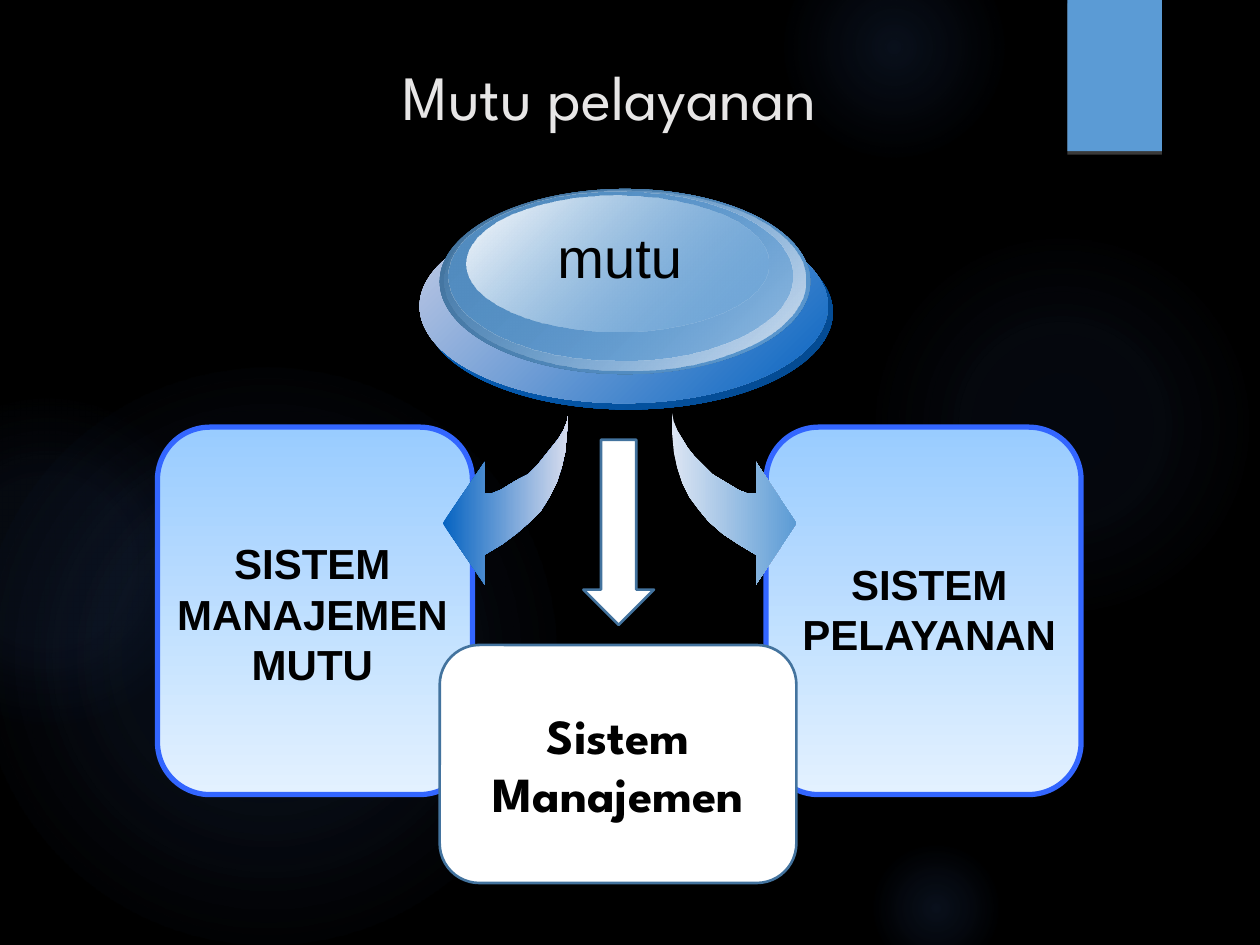
from lxml.etree import SubElement
from pptx import Presentation
from pptx.dml.color import RGBColor
from pptx.enum.shapes import MSO_SHAPE
from pptx.enum.text import MSO_ANCHOR, PP_ALIGN
from pptx.oxml.ns import qn
from pptx.util import Pt

# Soft lights: left, top, size, stops of (position, opacity)
GLOWS = [
    (496, 132, 222, [(0, 7), (36, 6), (69, 0)]),
    (448, -36, 126, [(0, 14), (36, 7), (73, 0)]),
    (496, 480, 78, [(0, 14), (36, 7), (66, 0)]),
    (-12, 210, 330, [(0, 11), (36, 10), (75, 0)]),
    (-66, 228, 186, [(0, 8), (36, 8), (72, 0)]),
]

# Layers of the disc: box, first and last (colour, opacity)
DISC = [
    ((242.6, 123.1, 233.3, 110.9), ("0563C1", 100), ("04488D", 100)),
    ((239.8, 119.5, 233.3, 110.9), ("C6CDE6", 100), ("0563C1", 100)),
    ((251.3, 108, 211.7, 105.8), ("416F98", 100), ("5B9BD5", 100)),
    ((254.2, 108.7, 205.9, 103), ("5B9BD5", 0), ("D8E3F1", 100)),
    ((256.3, 109.4, 196.6, 96.5), ("528CC0", 100), ("5B9BD5", 48)),
    ((266.4, 111.6, 172.8, 77.8), ("FFFFFF", 100), ("5B9BD5", 38)),
]

# Curved arrow: distance outward from its tail, distance down
CURVE = [
    (0, 0), (0.5, 10.8), (1.5, 21.6), (3.5, 31), (6.5, 39.6), (10.5, 47.5),
    (16, 55.5), (21.5, 62), (29.5, 68.5), (38, 75), (48, 80.6), (48, 98),
    (71.3, 62.6), (48, 28), (48, 45.4), (43.5, 45.4), (38.5, 44), (33.5, 41),
    (28.5, 38), (23, 34.5), (18, 30.2), (13.5, 25.2), (9.5, 20.2), (6, 15),
    (3, 10), (1, 5),
]
AXIS, TAIL, TOP = 354.2, 29.5, 236.2


def rgb(code):
    return RGBColor.from_string(code)


def tint(parent, code, alpha):
    node = SubElement(parent, qn("a:srgbClr"), val=code)
    if alpha < 100:
        SubElement(node, qn("a:alpha"), val=str(alpha * 1000))


def blend(shape, stops, angle=None):
    """Gradient of (position, colour, opacity); radial without an angle."""
    shape.fill.background()
    props = shape.fill._xPr
    old = props.find(qn("a:noFill"))
    grad = SubElement(props, qn("a:gradFill"), rotWithShape="1")
    props.replace(old, grad)
    group = SubElement(grad, qn("a:gsLst"))
    for pos, code, alpha in stops:
        tint(SubElement(group, qn("a:gs"), pos=str(pos * 1000)), code, alpha)
    if angle is None:
        way = SubElement(grad, qn("a:path"), path="circle")
        SubElement(way, qn("a:fillToRect"), l="50000", t="50000",
                   r="50000", b="50000")
    else:
        SubElement(grad, qn("a:lin"), ang=str(angle * 60000), scaled="0")


def plain(shape, fill=None, line=None, width=1):
    shape.shadow.inherit = False
    if fill:
        shape.fill.solid()
        shape.fill.fore_color.rgb = rgb(fill)
    if line:
        shape.line.color.rgb = rgb(line)
        shape.line.width = Pt(width)
    else:
        shape.line.fill.background()
    return shape


def block(slide, kind, box, *style):
    return plain(slide.shapes.add_shape(kind, *map(Pt, box)), *style)


def write(shape, text, size, font, color="000000", bold=False):
    frame = shape.text_frame
    frame.text = text
    for para in frame.paragraphs:
        para.alignment = PP_ALIGN.CENTER
        for run in para.runs:
            run.font.size = Pt(size)
            run.font.name = font
            run.font.bold = bold
            run.font.color.rgb = rgb(color)


def label(slide, box, text, size, bold=False, wrap=True):
    note = slide.shapes.add_textbox(*map(Pt, box))
    note.text_frame.word_wrap = wrap
    write(note, text, size, "Arial", bold=bold)


def scene(slide):
    slide.background.fill.solid()
    slide.background.fill.fore_color.rgb = rgb("000000")
    for left, top, size, stops in GLOWS:
        glow = block(slide, MSO_SHAPE.OVAL, (left, top, size, size))
        blend(glow, [(pos, "4472C4", alpha) for pos, alpha in stops])
    # Corner tab with a thin shadow below
    tab = block(slide, MSO_SHAPE.RECTANGLE, (610, 0, 54, 86.4), "5B9BD5")
    effect = tab.fill._xPr.find(qn("a:effectLst"))
    shade = SubElement(effect, qn("a:outerShdw"), blurRad="0",
                       dist=str(Pt(2)), dir="5400000", rotWithShape="0")
    tint(shade, "808080", 45)


def head(slide, text):
    title = slide.shapes.title
    title.left, title.top, title.width, title.height = map(
        Pt, (74.9, 29.5, 555.8, 110.2))
    write(title, text, 36, "League Spartan", "E7E6E6")
    title.text_frame.vertical_anchor = MSO_ANCHOR.TOP
    slide.shapes._spTree.append(title._element)  # above the lights


def panel(slide, left):
    box = block(slide, MSO_SHAPE.ROUNDED_RECTANGLE, (left, 244.1, 180, 210),
                None, "3366FF", 3)
    blend(box, [(0, "99CCFF", 100), (100, "E3F1FF", 100)], 90)


def curve(slide, side, start, end):
    """Curved arrow; side is -1 for left and 1 for right."""
    spots = [(AXIS + side * (TAIL + out), TOP + down) for out, down in CURVE]
    pen = slide.shapes.build_freeform(*spots[0], scale=Pt(1))
    pen.add_line_segments(spots[1:], close=True)
    arrow = plain(pen.convert_to_shape())
    blend(arrow, [(0, start, 100), (100, end, 100)], 0)


def disc(slide):
    for box, first, last in DISC:
        oval = block(slide, MSO_SHAPE.OVAL, box)
        blend(oval, [(0, *first), (100, *last)], 45)
    label(slide, (311, 123.8, 86.4, 46), "mutu", 32, wrap=False)


def card(slide, text):
    box = block(slide, MSO_SHAPE.ROUNDED_RECTANGLE,
                (251.3, 368.6, 203.8, 136), "FFFFFF", "43739E", 1.5)
    box.text_frame.vertical_anchor = MSO_ANCHOR.MIDDLE
    write(box, text, 28, "League Spartan", bold=True)


def main():
    deck = Presentation()
    deck.slide_width, deck.slide_height = Pt(720), Pt(540)
    slide = deck.slides.add_slide(deck.slide_layouts[5])
    scene(slide)
    head(slide, "Mutu pelayanan ")
    # Side panels and the arrows to them
    for left in (437.8, 90):
        panel(slide, left)
    label(slide, (87.8, 303.8, 181.4, 94.3), "SISTEM MANAJEMEN MUTU", 24, True)
    curve(slide, -1, "0563C1", "D8DDEE")
    curve(slide, 1, "DCE5F3", "5B9BD5")
    disc(slide)
    label(slide, (450.7, 315.4, 160.6, 65.5), "SISTEM PELAYANAN", 24, True)
    # Centre card and its arrow
    card(slide, "Sistem\nManajemen")
    block(slide, MSO_SHAPE.DOWN_ARROW, (333.4, 251.3, 40.3, 105.8),
          "FFFFFF", "43739E", 1.5)
    deck.save("out.pptx")


if __name__ == "__main__":
    main()
